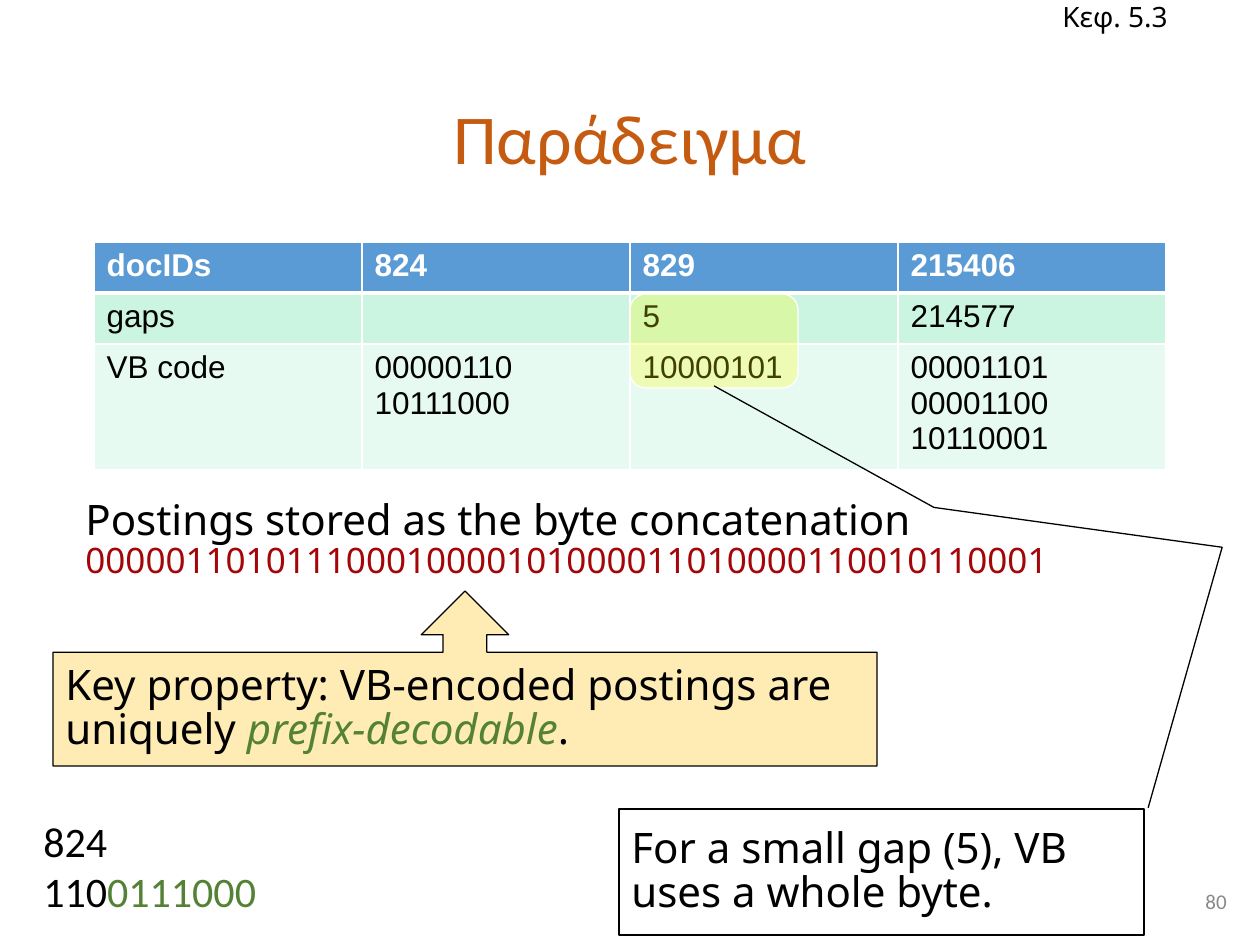
from dataclasses import dataclass

from lxml.etree import SubElement
from pptx import Presentation
from pptx.dml.color import RGBColor
from pptx.enum.shapes import MSO_SHAPE as Shape
from pptx.enum.text import MSO_ANCHOR as Anchor, PP_ALIGN as Align
from pptx.oxml import parse_xml
from pptx.oxml.ns import nsdecls, qn
from pptx.util import Pt

EMU_PER_PX = 914400 / 126


@dataclass(frozen=True)
class Theme:
    black: str = "000000"
    white: str = "FFFFFF"
    orange: str = "C55A11"
    red: str = "A40508"
    green: str = "548235"
    grey: str = "898989"
    header: str = "5B9BD5"
    band_dark: str = "CBF5E1"
    band_light: str = "E7FAF1"
    gold: str = "FFC000"
    yellow: str = "FFFF00"
    heading_font: str = "Calibri"
    body_font: str = "Noto Sans"
    table_font: str = "Arial"
    title: int = 40
    body: int = 24
    code: int = 20
    table: int = 18
    section: int = 16
    footer: int = 12
    body_leading: float = 0.87
    title_leading: float = 0.9


THEME = Theme()


def px(*lengths):
    return [round(length * EMU_PER_PX) for length in lengths]


def add_run(paragraph, text, font, size, color=THEME.black, bold=False, italic=False):
    run = paragraph.add_run()
    run.text = text
    run.font.name = font
    run.font.size = Pt(size)
    run.font.bold = bold
    run.font.italic = italic
    run.font.color.rgb = RGBColor.from_string(color)


def write_lines(frame, lines, font, align=Align.LEFT, anchor=Anchor.TOP, leading=None):
    """Each line is a list of runs: (text, size[, color[, bold[, italic]]])."""
    frame.word_wrap = True
    frame.vertical_anchor = anchor
    for i, runs in enumerate(lines):
        paragraph = frame.paragraphs[0] if i == 0 else frame.add_paragraph()
        paragraph.alignment = align
        if leading:
            paragraph.line_spacing = leading
        for text, *style in runs:
            add_run(paragraph, text, font, *style)


def add_text(slide, box, lines, font, **layout):
    label = slide.shapes.add_textbox(*px(*box))
    write_lines(label.text_frame, lines, font, **layout)


def add_outlined(shapes, kind, box, line, adjustments, fill=None, opacity=100):
    shape = shapes.add_shape(kind, *px(*box))
    shape.shadow.inherit = False
    for i, value in enumerate(adjustments):
        shape.adjustments[i] = value
    shape.line.color.rgb = RGBColor.from_string(line)
    shape.line.width = Pt(0.75)
    if fill:
        shape.fill.solid()
        shape.fill.fore_color.rgb = RGBColor.from_string(fill)
        color = shape.fill._xPr.find(".//" + qn("a:srgbClr"))
        SubElement(color, qn("a:alpha"), val=str(opacity * 1000))
    else:
        shape.fill.background()
    return shape


def set_borders(cell, top, bottom):
    properties = cell._tc.get_or_add_tcPr()
    for i, (side, points) in enumerate((("L", 1), ("R", 1), ("T", top), ("B", bottom))):
        properties.insert(i, parse_xml(
            f'<a:ln{side} {nsdecls("a")} w="{Pt(points)}"><a:solidFill>'
            f'<a:srgbClr val="{THEME.white}"/></a:solidFill></a:ln{side}>'))


def add_encoding_table(slide, box):
    rows = [
        ("docIDs", "824", "829", "215406"),
        ("gaps", "", "5", "214577"),
        ("VB code", "00000110 10111000", "10000101", "00001101 00001100 10110001"),
    ]
    # Per row: height, fill, top border, bottom border
    row_styles = [
        (51, THEME.header, 1, 3),
        (51, THEME.band_dark, 3, 1),
        (117, THEME.band_light, 1, 1),
    ]
    table = slide.shapes.add_table(len(rows), len(rows[0]), *px(*box)).table
    for r, (values, (height, fill, top, bottom)) in enumerate(zip(rows, row_styles)):
        table.rows[r].height = px(height)[0]
        is_header = r == 0
        color = THEME.white if is_header else THEME.black
        for c, value in enumerate(values):
            cell = table.cell(r, c)
            cell.fill.solid()
            cell.fill.fore_color.rgb = RGBColor.from_string(fill)
            set_borders(cell, top, bottom)
            if value:
                add_run(cell.text_frame.paragraphs[0], value, THEME.table_font,
                        THEME.table, color, is_header)


def add_key_property(slide, box):
    callout = add_outlined(slide.shapes, Shape.UP_ARROW_CALLOUT, box, THEME.black,
                           (0.25, 0.25, 0.25, 0.65), THEME.gold, 29)
    write_lines(callout.text_frame, [
        [("Key property: VB-encoded postings are", THEME.body)],
        [("uniquely ", THEME.body),
         ("prefix-decodable", THEME.body, THEME.green, False, True),
         (".", THEME.body)],
    ], THEME.body_font, anchor=Anchor.MIDDLE, leading=THEME.body_leading)


def add_small_gap_note(slide, box):
    left, top, width, height = box
    group = slide.shapes.add_group_shape()
    # Highlight over the small gap and its code
    add_outlined(group.shapes, Shape.ROUNDED_RECTANGLE,
                 (left + 11, top - 515, 168, 94), THEME.white, (0.167,), THEME.yellow, 25)
    # Note, with its leader bending back to the highlight (y, x pairs)
    leader = (-0.009, 1.008, -2.077, 1.149, -2.393, 0.6, -3.358, 0.181)
    note = add_outlined(group.shapes, Shape.LINE_CALLOUT_3, box, THEME.black, leader)
    write_lines(note.text_frame, [
        [("For a small gap (5), VB", THEME.body)],
        [("uses a whole byte.", THEME.body)],
    ], THEME.body_font, anchor=Anchor.MIDDLE, leading=THEME.body_leading)


def build_example_slide(slide):
    # Title
    add_text(slide, (87, 50, 1086, 183), [[("Παράδειγμα", THEME.title, THEME.orange)]],
             THEME.heading_font, align=Align.CENTER, anchor=Anchor.MIDDLE,
             leading=THEME.title_leading)
    add_encoding_table(slide, (94, 242, 1072, 219))
    # Slide number
    add_text(slide, (955, 876, 284, 50), [[("80", THEME.footer, THEME.grey)]],
             THEME.heading_font, align=Align.RIGHT, anchor=Anchor.MIDDLE)
    # Concatenated postings
    add_text(slide, (73, 494, 1108, 106), [
        [("Postings stored as the byte concatenation", THEME.body)],
        [("000001101011100010000101000011010000110010110001", THEME.code, THEME.red)],
    ], THEME.body_font, leading=THEME.body_leading)
    add_key_property(slide, (53, 591, 824, 175))
    add_small_gap_note(slide, (619, 809, 525, 126))
    # Chapter reference
    add_text(slide, (1050, -5, 139, 47), [[("Κεφ. 5.3", THEME.section)]],
             THEME.body_font, anchor=Anchor.MIDDLE, leading=THEME.body_leading)
    # Binary form of the first docID
    add_text(slide, (31, 809, 388, 115), [
        [("824", THEME.body)],
        [("110", THEME.body), ("0111000", THEME.body, THEME.green)],
    ], THEME.heading_font)


def main():
    deck = Presentation()
    deck.slide_width, deck.slide_height = px(1260, 945)
    build_example_slide(deck.slides.add_slide(deck.slide_layouts[6]))
    deck.save("out.pptx")


if __name__ == "__main__":
    main()
